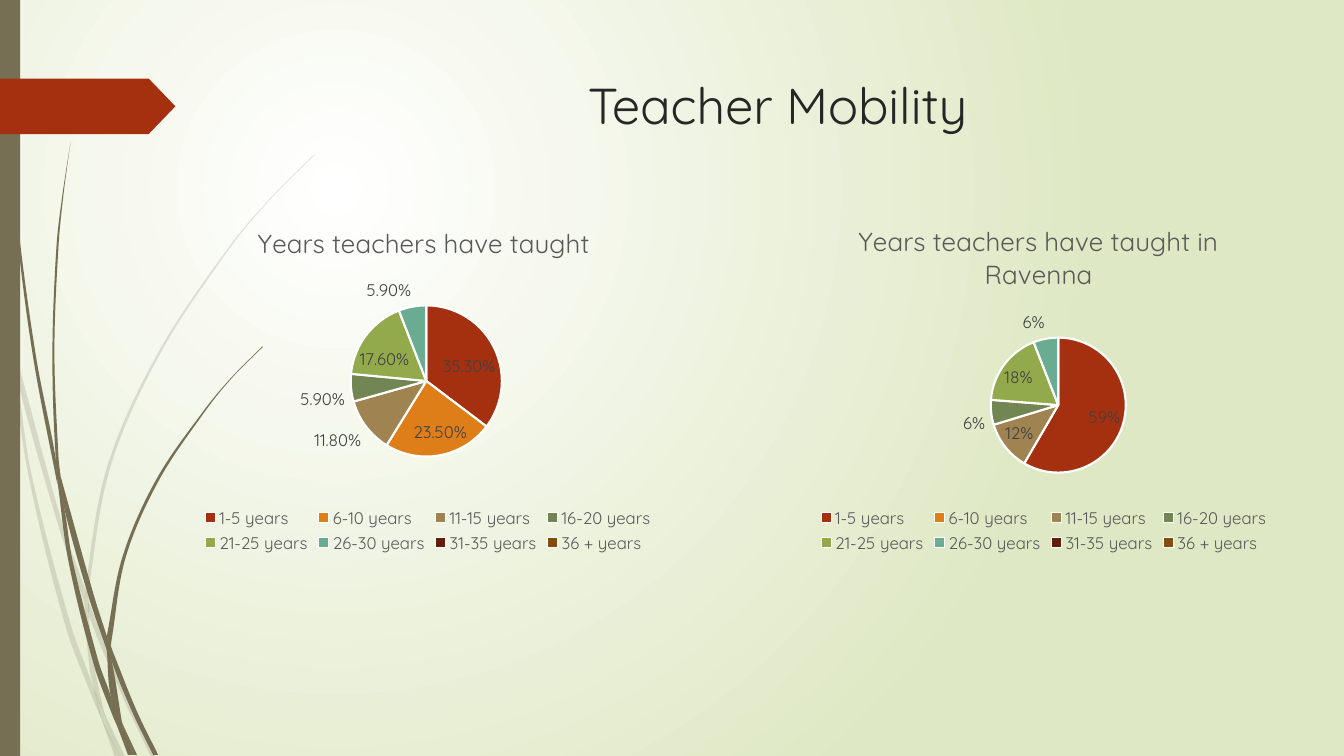
from dataclasses import dataclass

from lxml import etree
from pptx import Presentation
from pptx.chart.data import CategoryChartData
from pptx.dml.color import RGBColor
from pptx.enum.chart import XL_CHART_TYPE, XL_LABEL_POSITION, XL_LEGEND_POSITION
from pptx.enum.shapes import MSO_SHAPE
from pptx.enum.text import PP_ALIGN
from pptx.oxml import parse_xml
from pptx.oxml.ns import nsdecls, qn
from pptx.util import Cm, Pt

PIE, BEST = XL_CHART_TYPE.PIE, XL_LABEL_POSITION.BEST_FIT
BOTTOM, CENTER = XL_LEGEND_POSITION.BOTTOM, PP_ALIGN.CENTER
RECT, TAG = MSO_SHAPE.RECTANGLE, MSO_SHAPE.PENTAGON

FONT = "Quicksand"
BROWN, RED, WHITE = "766F54", "A53010", "FFFFFF"
YEARS = ["1-5 years", "6-10 years", "11-15 years", "16-20 years",
         "21-25 years", "26-30 years", "31-35 years", "36 + years"]
HUES = [RED, "DE7E18", "9F8351", "728653", "92AA4C", "6AAC91", "631D0A", "854C0E"]

Point = tuple[float, float]


@dataclass
class Blade:
    """Part of a grass blade: two edges, each from top to bottom (inches)."""
    left: list[Point]
    right: list[Point]


@dataclass
class Pie:
    """A pie chart: box, title corner, circle centre and diameter (inches)."""
    title: str
    vals: list[float]
    form: str
    box: tuple[float, float, float, float]
    head: Point
    mid: Point
    size: float


PALE = [
    Blade([(0, 2.99), (.1, 3.44), (.11, 3.5)], [(0, 2.82), (.09, 3.22), (.11, 3.5)]),
    Blade([(.14, 3.45), (.17, 3.76), (.58, 5.22), (.84, 5.99)],
          [(.14, 3.45), (.62, 5.2), (.85, 5.86)]),
    Blade([(.88, 5.96), (.88, 6.1), (1.23, 6.94), (1.5, 7.51)],
          [(.88, 5.96), (.92, 6.07), (1.27, 6.92), (1.55, 7.51)]),
    Blade([(1.05, 7.11), (1.19, 7.51)], [(1.05, 7.11), (1.24, 7.51)]),
    Blade([(.11, 3.5), (.28, 4.7), (.65, 6.21), (.92, 6.93), (1.01, 7.14)],
          [(.11, 3.5), (.17, 3.76), (.31, 4.69), (.7, 6.19), (.93, 6.83), (1.01, 7.14)]),
    Blade([(.84, 5.99), (.87, 6.46), (.93, 6.83), (1.05, 7.11)],
          [(.84, 5.99), (.88, 6.1), (.91, 6.46), (1.03, 7.06), (1.05, 7.11)]),
    Blade([(3.12, 1.53), (2.68, 1.97), (2.28, 2.44), (1.58, 3.48), (1.07, 4.61),
           (.85, 5.84), (.88, 5.96)],
          [(3.12, 1.54), (2.68, 1.98), (2.29, 2.45), (1.6, 3.49), (1.1, 4.62),
           (.88, 5.84), (.88, 5.96)]),
    Blade([(1.01, 7.14), (1.14, 7.51)], [(1.01, 7.14), (1.19, 7.51)]),
    Blade([(.85, 5.86), (.84, 5.99), (.88, 6.08)], [(.85, 5.86), (.88, 5.96), (.88, 6.1)]),
    Blade([(.93, 6.83), (1.01, 7.14), (1.19, 7.51)], [(.93, 6.83), (1.05, 7.11), (1.19, 7.51)]),
]
DARK = [
    Blade([(.03, 0), (.04, .48), (.07, 1.1), (.17, 2.33), (.33, 3.55), (.57, 4.81)],
          [(.04, 0), (.05, .48), (.08, 1.09), (.19, 2.32), (.36, 3.55), (.55, 4.53), (.57, 4.81)]),
    Blade([(.6, 4.72), (.64, 5.05), (.88, 5.92), (1.06, 6.45)],
          [(.6, 4.72), (.93, 5.9), (1.06, 6.31)]),
    Blade([(1.1, 6.41), (1.11, 6.56), (1.32, 7.08), (1.52, 7.49)],
          [(1.1, 6.41), (1.13, 6.49), (1.36, 7.06), (1.57, 7.49)]),
    Blade([(.57, 4.77), (.68, 5.57), (.93, 6.59), (1.11, 7.08), (1.17, 7.22)],
          [(.57, 4.77), (.64, 5.05), (.72, 5.56), (.98, 6.57), (1.1, 6.91), (1.17, 7.22)]),
    Blade([(.7, 1.41), (.62, 1.93), (.56, 2.45), (.52, 3.49), (.55, 4.49), (.6, 4.72)],
          [(.7, 1.41), (.63, 1.93), (.58, 2.45), (.54, 3.49), (.58, 4.53), (.6, 4.72)]),
    Blade([(1.22, 7.19), (1.33, 7.49)], [(1.22, 7.19), (1.36, 7.49)]),
    Blade([(.55, 4.49), (.57, 4.77), (.64, 5.05)], [(.55, 4.49), (.6, 4.72), (.64, 5.05)]),
    Blade([(2.6, 3.44), (2.31, 3.73), (2.04, 4.05), (1.56, 4.74), (1.22, 5.51), (1.06, 6.31)],
          [(2.61, 3.44), (2.31, 3.74), (2.05, 4.06), (1.58, 4.76), (1.25, 5.52), (1.11, 6.33),
           (1.1, 6.41)]),
    Blade([(1.17, 7.22), (1.27, 7.49)], [(1.17, 7.22), (1.31, 7.49)]),
    Blade([(1.06, 6.45), (1.1, 6.91), (1.22, 7.19)],
          [(1.06, 6.45), (1.11, 6.56), (1.21, 7.16), (1.22, 7.19)]),
    Blade([(1.06, 6.31), (1.06, 6.45), (1.11, 6.56)], [(1.06, 6.31), (1.1, 6.41), (1.11, 6.56)]),
    Blade([(1.1, 6.91), (1.17, 7.22), (1.3, 7.49)], [(1.1, 6.91), (1.22, 7.19), (1.33, 7.49)]),
]
PIES = [
    Pie("Years teachers have taught", [.353, .235, .118, .059, .176, .059, 0, 0],
        "0.00%;;", (.26, 2.08, 7.97, 3.45), (2.51, 2.18), (4.23, 3.78), 1.5),
    Pie("Years teachers have taught in Ravenna", [.59, 0, .12, .06, .18, .06, 0, 0],
        "0%;;", (7.71, 2.08, 5.29, 3.45), (8.47, 2.16), (10.5, 4.02), 1.34),
]


def inch(val: float) -> int:
    return Cm(val * 2.54)


def rgb(code: str) -> RGBColor:
    return RGBColor.from_string(code)


def style(font, size: float, code: str) -> None:
    font.name, font.size, font.bold = FONT, Pt(size), False
    font.color.rgb = rgb(code)


def paint(shape, code: str) -> None:
    shape.shadow.inherit = False
    shape.fill.solid()
    shape.fill.fore_color.rgb = rgb(code)
    shape.line.fill.background()


def curve(knots: list[Point]) -> list[Point]:
    """Put two Bezier handles between each pair of knots."""
    ends = zip(knots[:1] + knots[:-1], knots[1:] + knots[-1:])
    tilt = [(b[0] - a[0]) / (b[1] - a[1]) for a, b in ends]
    out = knots[:1]
    for i, ((xa, ya), (xb, yb)) in enumerate(zip(knots, knots[1:])):
        gap = (yb - ya) / 3
        out += [(xa + gap * tilt[i], ya + gap), (xb - gap * tilt[i + 1], yb - gap), (xb, yb)]
    return out


def draw_blade(slide, blade: Blade, alpha: int) -> None:
    left, right = curve(blade.left), curve(blade.right)[::-1]
    dots = [(inch(x), inch(y)) for x, y in left + [left[-1], right[0]] + right]
    pen = slide.shapes.build_freeform(*dots[0])
    pen.add_line_segments(dots[1:], close=True)
    shape = pen.convert_to_shape()
    paint(shape, BROWN)
    hue = shape.element.spPr.find(".//" + qn("a:srgbClr"))
    etree.SubElement(hue, qn("a:alpha"), val=str(alpha * 1000))
    # Join each three straight steps into one Bezier step
    steps = list(shape.element.iter(qn("a:lnTo")))
    for first, *rest in zip(steps[::3], steps[1::3], steps[2::3]):
        bend = etree.Element(qn("a:cubicBezTo"))
        first.addprevious(bend)
        for step in (first, *rest):
            bend.append(step[0])
            step.getparent().remove(step)


def place(inner: str, **parts: float):
    """Make a manual chart layout from fractions of the chart box."""
    sizes = "".join(f'<c:{key} val="{val:.4f}"/>' for key, val in parts.items())
    return parse_xml(f'<c:layout {nsdecls("c")}><c:manualLayout>{inner}<c:xMode val="edge"/>'
                     f'<c:yMode val="edge"/>{sizes}</c:manualLayout></c:layout>')


def draw_pie(slide, pie: Pie) -> None:
    data = CategoryChartData(number_format=pie.form)
    data.categories = YEARS
    data.add_series("Series 1", pie.vals)
    chart = slide.shapes.add_chart(PIE, *map(inch, pie.box), data).chart
    style(chart.font, 10, "000000")
    # Title and legend
    para = chart.chart_title.text_frame.paragraphs[0]
    para.text = pie.title
    style(para.runs[0].font, 18.6, "595959")
    chart.has_legend = True
    chart.legend.position, chart.legend.include_in_layout = BOTTOM, False
    style(chart.legend.font, 12, "595959")
    # Slices and labels
    plot = chart.plots[0]
    plot.vary_by_categories = plot.has_data_labels = True
    for i, hue in enumerate(HUES):
        form = plot.series[0].points[i].format
        form.fill.solid()
        form.fill.fore_color.rgb = rgb(hue)
        form.line.color.rgb, form.line.width = rgb(WHITE), Pt(1.5)
    labels = plot.data_labels
    labels.show_value, labels.show_percentage, labels.position = True, False, BEST
    labels.number_format, labels.number_format_is_linked = pie.form, False
    style(labels.font, 12, "404040")
    # Places of title and circle
    left, top, wide, high = pie.box
    head, area = chart.chart_title.element, chart.element.find(".//" + qn("c:plotArea"))
    for part in (head, area):
        for old in part.findall(qn("c:layout")):
            part.remove(old)
    head.find(qn("c:tx")).addnext(
        place("", x=(pie.head[0] - left) / wide, y=(pie.head[1] - top) / high))
    area.insert(0, place('<c:layoutTarget val="inner"/>',
                         x=(pie.mid[0] - pie.size / 2 - left) / wide,
                         y=(pie.mid[1] - pie.size / 2 - top) / high,
                         w=pie.size / wide, h=pie.size / high))


def main() -> None:
    deck = Presentation()
    deck.slide_width, deck.slide_height = Cm(33.87), Cm(19.05)
    slide = deck.slides.add_slide(deck.slide_layouts[6])
    # Background glow
    fill = slide.background.fill
    fill.gradient()
    for stop, hue in zip(fill.gradient_stops, (WHITE, "DFE8C4")):
        stop.color.rgb = rgb(hue)
    line = slide.element.find(".//" + qn("a:lin"))
    line.getparent().replace(line, parse_xml(
        f'<a:path {nsdecls("a")} path="circle"><a:fillToRect l="50000" t="50000" '
        'r="100000" b="100000"/></a:path>'))
    # Grass, side bar and tag
    for blades, alpha in ((PALE, 20), (DARK, 100)):
        for blade in blades:
            draw_blade(slide, blade, alpha)
    paint(slide.shapes.add_shape(RECT, 0, 0, inch(.2), inch(7.5)), BROWN)
    tag = slide.shapes.add_shape(TAG, 0, inch(.78), inch(1.74), inch(.55))
    tag.adjustments[0] = .48
    paint(tag, RED)
    # Heading
    frame = slide.shapes.add_textbox(*map(inch, (2.84, .69, 9.75, 1.4))).text_frame
    frame.word_wrap, frame.text = True, "Teacher Mobility"
    frame.paragraphs[0].alignment = CENTER
    style(frame.paragraphs[0].runs[0].font, 36, "262626")
    for pie in PIES:
        draw_pie(slide, pie)
    deck.save("out.pptx")


if __name__ == "__main__":
    main()
